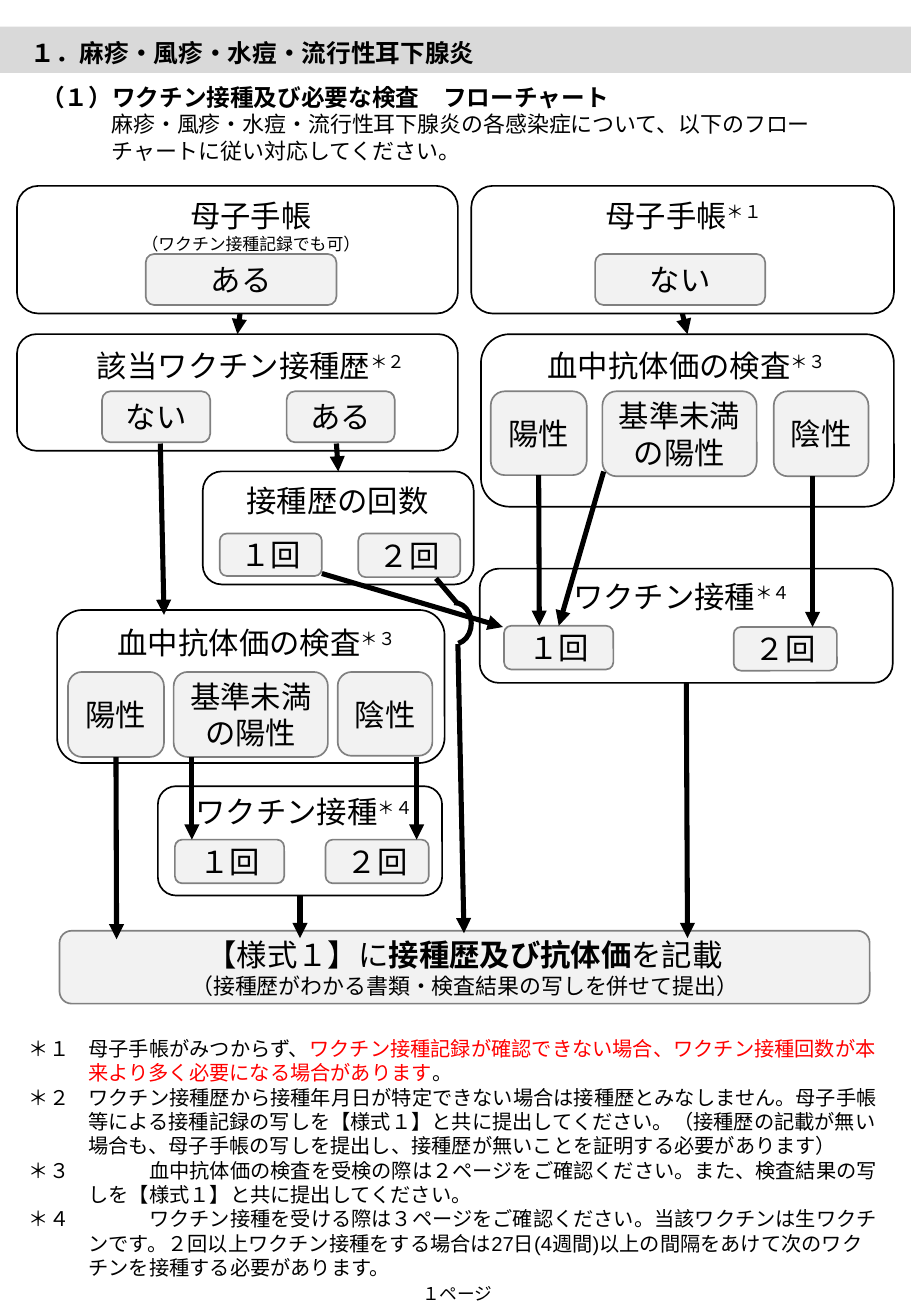
import pptx
import pptx.util
import pptx.dml.color
import pptx.enum.shapes
import pptx.enum.text
import pptx.oxml.ns
import lxml.etree

PX = 9144
RGB = pptx.dml.color.RGBColor
BLACK, WHITE, RED = RGB(0, 0, 0), RGB(255, 255, 255), RGB(255, 0, 0)
BAND, PALE, GRAY = RGB(0xD9, 0xD9, 0xD9), RGB(0xF2, 0xF2, 0xF2), RGB(0x80, 0x80, 0x80)
SHAPE = pptx.enum.shapes.MSO_SHAPE
ANCHOR = pptx.enum.text.MSO_ANCHOR
LEFT, CENTER = pptx.enum.text.PP_ALIGN.LEFT, pptx.enum.text.PP_ALIGN.CENTER

PANELS = {
    "history": (14, 275, 363, 96), "test_right": (396, 275, 340, 142),
    "count": (167, 388, 223, 93), "vaccine_right": (395, 468, 340, 94),
    "test_left": (47, 502, 319, 126), "vaccine_left": (130, 647, 234, 90),
}
NODES = {
    "history_no": ("ない", 84, 322, 89, 42), "history_yes": ("ある", 236, 322, 89, 42),
    "right_negative": ("陰性", 637, 322, 78, 70),
    "right_low": ("基準未満の陽性", 496, 322, 127, 70),
    "right_positive": ("陽性", 404, 322, 79, 69),
    "count_one": ("１回", 181, 439, 84, 35), "count_two": ("２回", 295, 439, 84, 36),
    "right_one": ("１回", 415, 515, 90, 36), "right_two": ("２回", 604, 516, 85, 36),
    "left_negative": ("陰性", 278, 553, 78, 69),
    "left_low": ("基準未満の陽性", 143, 553, 127, 70),
    "left_positive": ("陽性", 56, 553, 79, 70),
    "left_one": ("１回", 144, 691, 90, 36), "left_two": ("２回", 268, 691, 85, 36),
}
TOP_PANELS = {"no_book": (388, 153, 348, 105), "book": (14, 153, 363, 105)}
TOP_NODES = {"book_yes": ("ある", 120, 209, 157, 42), "book_no": ("ない", 490, 209, 140, 42)}
ARROWS = [
    (199, 251, 196, 275, "book_yes", "history"),
    (560, 251, 566, 275, "book_no", "test_right"),
    (277, 365, 279, 388, None, "count"),
    (132, 365, 135, 506, None, None),
    (669, 392, 669, 516, None, None),
    (497, 388, 460, 515, None, "right_one"),
    (444, 392, 444, 515, "right_positive", None),
    (566, 562, 566, 772, "vaccine_right", None),
    (265, 472, 414, 516, None, None),
    (247, 737, 247, 772, "vaccine_left", None),
    (158, 623, 158, 691, None, None),
    (343, 623, 343, 691, None, None),
    (377, 530, 382, 768, None, None),
    (95, 623, 96, 773, "left_positive", None),
]
LABELS = [
    ("血中抗体価の検査", "＊３", 441, 281, 268), ("該当ワクチン接種歴", "＊２", 70, 281, 287),
    ("接種歴の回数", "", 193, 392, 172), ("ワクチン接種", "＊４", 462, 471, 212),
    ("血中抗体価の検査", "＊３", 87, 509, 274), ("ワクチン接種", "＊４", 151, 648, 212),
]
NOTES = [
    (49, [("＊１\t母子手帳がみつからず、", BLACK),
          ("ワクチン接種記録が確認できない場合、ワクチン接種回数が本来より多く必要になる場合があります", RED),
          ("。", BLACK)]),
    (49, [("＊２\tワクチン接種歴から接種年月日が特定できない場合は接種歴とみなしません。"
           "母子手帳等による接種記録の写しを【様式１】と共に提出してください。"
           "（接種歴の記載が無い場合も、母子手帳の写しを提出し、接種歴が無いことを証明する必要があります）", BLACK)]),
    (49, [("＊３\t\t血中抗体価の検査を受検の際は２ページをご確認ください。"
           "また、検査結果の写しを【様式１】と共に提出してください。", BLACK)]),
    (19, [("＊４\t\tワクチン接種を受ける際は３ページをご確認ください。当該ワクチンは生ワクチンです。"
           "２回以上ワクチン接種をする場合は27日(4週間)以上の間隔をあけて次のワクチンを接種する必要があります。", BLACK)]),
]


def px(*lengths):
    """Turn px lengths into EMU."""
    return [n * PX for n in lengths]


def add_run(p, text, size, color=BLACK, bold=False, raised=False):
    """Add one formatted run to a paragraph."""
    r = p.add_run()
    r.text = text
    r.font.name, r.font.size, r.font.bold = "Arial", pptx.util.Pt(size), bold
    r.font.color.rgb = color
    if raised:
        r._r.get_or_add_rPr().set("baseline", "30000")


def set_indent(p, margin, hanging, tab):
    """Set the left margin, hanging indent and tab stop of a paragraph."""
    pPr = p._p.get_or_add_pPr()
    pPr.set("marL", str(margin * PX))
    pPr.set("indent", str(-hanging * PX))
    tabs = lxml.etree.SubElement(pPr, pptx.oxml.ns.qn("a:tabLst"))
    lxml.etree.SubElement(tabs, pptx.oxml.ns.qn("a:tab"), pos=str(tab * PX), algn="l")


def fill_text(tf, paragraphs, align=LEFT):
    """Write paragraphs, each a list of run arguments, and return them."""
    tf.word_wrap = True
    for i, runs in enumerate(paragraphs):
        p = tf.paragraphs[0] if i == 0 else tf.add_paragraph()
        p.alignment = align
        for run in runs:
            add_run(p, *run)
    return tf.paragraphs


def add_text(s, box, paragraphs, align=LEFT):
    """Add a text box and return its paragraphs."""
    return fill_text(s.shapes.add_textbox(*px(*box)).text_frame, paragraphs, align)


def add_box(s, box, fill=WHITE, line=BLACK, kind=SHAPE.ROUNDED_RECTANGLE):
    """Add a filled shape with an optional thin outline."""
    sp = s.shapes.add_shape(kind, *px(*box))
    sp.shadow.inherit = False
    sp.fill.solid()
    sp.fill.fore_color.rgb = fill
    if line is None:
        sp.line.fill.background()
    else:
        sp.line.color.rgb, sp.line.width = line, pptx.util.Pt(1)
    return sp


def add_node(s, box, paragraphs):
    """Add a grey rounded box with centred text."""
    sp = add_box(s, box, PALE, GRAY)
    tf = sp.text_frame
    tf.margin_left = tf.margin_right = 5 * PX
    tf.vertical_anchor = ANCHOR.MIDDLE
    fill_text(tf, paragraphs, CENTER)
    return sp


def add_boxes(s, panels, nodes):
    """Add panels and then nodes, and return them by name."""
    boxes = {name: add_box(s, box) for name, box in panels.items()}
    for name, (text, *box) in nodes.items():
        boxes[name] = add_node(s, box, [[(text, 18)]])
    return boxes


def add_line(s, ends, arrow=True):
    """Add a thick straight connector, with an arrowhead by default."""
    cx = s.shapes.add_connector(pptx.enum.shapes.MSO_CONNECTOR.STRAIGHT, *px(*ends))
    cx.line.color.rgb, cx.line.width = BLACK, pptx.util.Pt(3)
    if arrow:
        ln = cx.line._get_or_add_ln()
        lxml.etree.SubElement(ln, pptx.oxml.ns.qn("a:tailEnd"), type="triangle")
    lxml.etree.SubElement(cx._element.spPr, pptx.oxml.ns.qn("a:effectLst"))
    return cx


def add_bend(s):
    """Add the line and arc that step over the crossing arrow."""
    add_line(s, (376, 496, 359, 476), arrow=False)
    arc = s.shapes.add_shape(SHAPE.ARC, *px(360, 496, 28, 34))
    arc.adjustments[0], arc.adjustments[1] = 162, 47.06
    arc.shadow.inherit = False
    arc.fill.background()
    arc.line.color.rgb, arc.line.width = BLACK, pptx.util.Pt(3)


def add_heading(s):
    """Add the banded title and the introduction."""
    title = s.shapes.title
    title.left, title.top, title.width, title.height = px(15, 26, 576, 35)
    tf = title.text_frame
    tf.auto_size = pptx.enum.text.MSO_AUTO_SIZE.NONE
    tf.vertical_anchor = ANCHOR.TOP
    fill_text(tf, [[("１．麻疹・風疹・水痘・流行性耳下腺炎", 14.6, BLACK, True)]])
    band = add_box(s, (-12, 22, 792, 38), BAND, None, SHAPE.RECTANGLE)
    title.element.addprevious(band.element)
    intro = add_text(s, (24, 63, 667, 77), [
        [("（１）ワクチン接種及び必要な検査　フローチャート", 14, BLACK, True)],
        [("麻疹・風疹・水痘・流行性耳下腺炎の各感染症について、以下のフローチャートに従い対応してください。", 13)]])
    set_indent(intro[1], 58, 0, 58)


def add_flowchart(s):
    """Add the boxes, arrows and labels of the flowchart."""
    boxes = add_boxes(s, PANELS, NODES)
    add_node(s, (49, 766, 667, 60), [
        [("【様式１】に", 18), ("接種歴及び抗体価", 18, BLACK, True), ("を記載", 18)],
        [("（接種歴がわかる書類・検査結果の写しを併せて提出）", 13)]])
    arrows = [add_line(s, arrow[:4]) for arrow in ARROWS]
    add_bend(s)
    boxes.update(add_boxes(s, TOP_PANELS, TOP_NODES))
    for cx, (*_, begin, end) in zip(arrows, ARROWS):
        if begin:
            cx.begin_connect(boxes[begin], 2)
        if end:
            cx.end_connect(boxes[end], 0)
    for text, mark, x, y, w in LABELS:
        runs = [(text, 18)] + ([(mark, 18, BLACK, False, True)] if mark else [])
        add_text(s, (x, y, w, 40), [runs])
    add_text(s, (96, 157, 221, 57),
             [[("母子手帳", 18)], [("（ワクチン接種記録でも可）", 10)]], CENTER)
    add_text(s, (478, 157, 170, 40),
             [[("母子手帳", 18), ("＊１", 18, BLACK, False, True)]], CENTER)


def add_notes(s):
    """Add the footnotes and the page number."""
    notes = [[(text, 12, color) for text, color in runs] for _, runs in NOTES]
    for p, (tab, _) in zip(add_text(s, (14, 848, 721, 212), notes), NOTES):
        set_indent(p, 49, 49, tab)
    add_text(s, (266, 1051, 221, 28), [[("１ページ", 10.5)]], CENTER)


def main():
    """Build the slide and save it."""
    prs = pptx.Presentation()
    prs.slide_width, prs.slide_height = px(750, 1083)
    s = prs.slides.add_slide(prs.slide_layouts[5])
    add_heading(s)
    add_flowchart(s)
    add_notes(s)
    prs.save("out.pptx")


if __name__ == "__main__":
    main()
